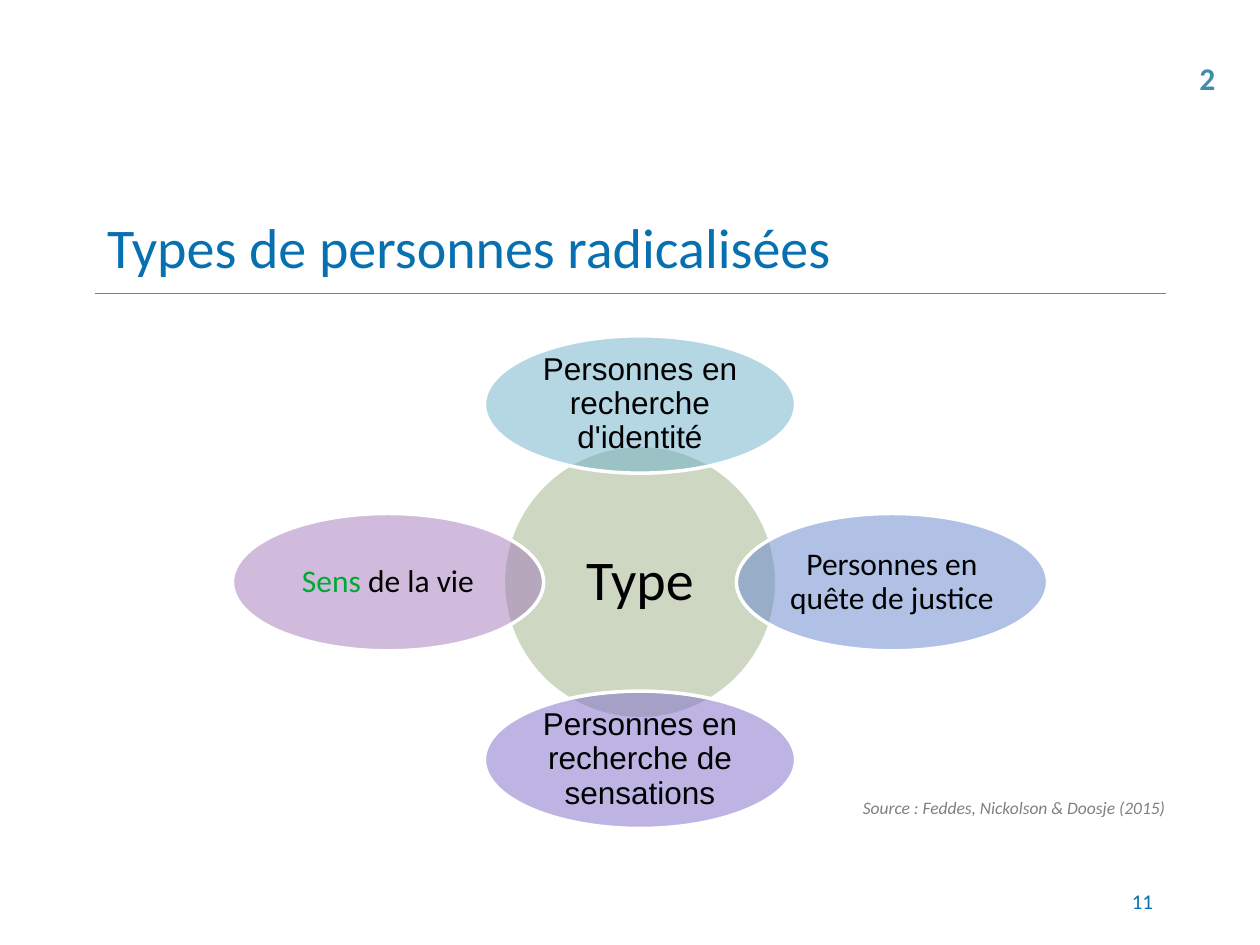
import pptx
import pptx.util
import pptx.dml.color
import pptx.enum.shapes
import pptx.enum.text
import pptx.oxml
import pptx.oxml.ns
from pptx.util import Inches

HUES = {
    "blue": "0770B1", "rule": "0BA7DF", "teal": "3E8EA9", "grey": "808080",
    "black": "000000", "white": "FFFFFF", "green": "00A933",
    "core": "9CB084", "top": "6BB1C9", "right": "6585CF",
    "bottom": "7E6BC9", "left": "A379BB",
}
ALIGN = pptx.enum.text.PP_ALIGN
ANCHOR = pptx.enum.text.MSO_ANCHOR
SHAPE = pptx.enum.shapes.MSO_SHAPE


def hue(name):
    return pptx.dml.color.RGBColor.from_string(HUES[name])


def assign(item, values):
    for key, value in values.items():
        setattr(item, key, value)


class Deck:
    """Holds the text style and the current slide."""

    def __init__(self, face="Calibri"):
        self.face = face
        self.show = pptx.Presentation()
        assign(self.show, {"slide_width": Inches(10), "slide_height": Inches(7.5)})
        self.slide = self.show.slides.add_slide(self.show.slide_layouts[5])

    def letter(self, shape, runs, size, frame=None, para=None, **font):
        """Fill a shape with one paragraph of (text, hue) runs."""
        body = shape.text_frame
        assign(body, {"word_wrap": True, "vertical_anchor": ANCHOR.TOP,
                      "auto_size": pptx.enum.text.MSO_AUTO_SIZE.NONE})
        assign(body, frame or {})
        line = body.paragraphs[0]
        assign(line, {"alignment": ALIGN.LEFT})
        assign(line, para or {})
        look = {"name": self.face, "size": pptx.util.Pt(size), **font}
        for text, tone in runs:
            run = line.add_run()
            run.text = text
            assign(run.font, look)
            run.font.color.rgb = hue(tone)

    def title(self, text, box):
        head = self.slide.shapes.title
        assign(head, dict(zip(("left", "top", "width", "height"), map(Inches, box))))
        self.letter(head, [(text, "blue")], 32, {"vertical_anchor": ANCHOR.MIDDLE})

    def label(self, text, tone, box, size, frame=None, para=None, **font):
        shape = self.slide.shapes.add_textbox(*map(Inches, box))
        self.letter(shape, [(text, tone)], size, frame, para, **font)

    def rule(self, left, right, y):
        line = self.slide.shapes.add_connector(
            pptx.enum.shapes.MSO_CONNECTOR.STRAIGHT,
            Inches(left), Inches(y), Inches(right), Inches(y))
        line.line.color.rgb = hue("rule")
        line.line.width = pptx.util.Pt(0.75)
        props = line._element.spPr
        props.append(pptx.oxml.parse_xml(
            "<a:effectLst %s/>" % pptx.oxml.ns.nsdecls("a")))

    def oval(self, mid, dims, tone, runs, size, pads, after, **font):
        """Draw a half-transparent ellipse centred on mid."""
        (x, y), (wide, high) = mid, dims
        shape = self.slide.shapes.add_shape(
            SHAPE.OVAL, Inches(x - wide / 2), Inches(y - high / 2),
            Inches(wide), Inches(high))
        shape.shadow.inherit = False
        shape.fill.solid()
        shape.fill.fore_color.rgb = hue(tone)
        color = shape._element.spPr.find(
            "%s/%s" % tuple(map(pptx.oxml.ns.qn, ("a:solidFill", "a:srgbClr"))))
        color.append(pptx.oxml.parse_xml(
            '<a:alpha %s val="50000"/>' % pptx.oxml.ns.nsdecls("a")))
        shape.line.color.rgb = hue("white")
        shape.line.width = pptx.util.Pt(2)
        side, edge = map(Inches, pads)
        frame = {"vertical_anchor": ANCHOR.MIDDLE, "margin_left": side,
                 "margin_right": side, "margin_top": edge, "margin_bottom": edge}
        para = {"alignment": ALIGN.CENTER, "line_spacing": 0.9,
                "space_after": pptx.util.Pt(after)}
        self.letter(shape, runs, size, frame, para, **font)


def main():
    deck = Deck()
    deck.rule(0.75, 9.25, 2.33)
    deck.title("Types de personnes radicalisées", (0.75, 1.58, 8.5, 0.75))
    deck.label("11", "blue", (7.17, 6.95, 2.08, 0.4), 12,
               {"vertical_anchor": ANCHOR.MIDDLE}, {"alignment": ALIGN.RIGHT})

    x, y = 5.08, 4.62
    deck.oval((x, y), (2.17, 2.17), "core", [("Type", "black")], 32,
              (0.04, 0.36), 11.2)
    petals = [
        ("top", 0, -1.41, "Arial", [("Personnes en recherche d'identité", "black")]),
        ("right", 2, 0, "Calibri", [("Personnes en quête de justice", "black")]),
        ("bottom", 0, 1.41, "Arial",
         [("Personnes en recherche de sensations", "black")]),
        ("left", -2, 0, "Calibri", [("Sens", "green"), (" de la vie", "black")]),
    ]
    for tone, dx, dy, face, runs in petals:
        deck.oval((x + dx, y + dy), (2.47, 1.09), tone, runs, 18,
                  (0.03, 0.18), 6.3, name=face)

    deck.label("Source : Feddes, Nickolson & Doosje (2015)", "grey",
               (6.75, 6.28, 2.67, 0.26), 10, italic=True)
    deck.label("2", "teal", (9.42, 0.42, 0.32, 0.4), 18,
               {"word_wrap": False}, bold=True)
    deck.show.save("out.pptx")


if __name__ == "__main__":
    main()
